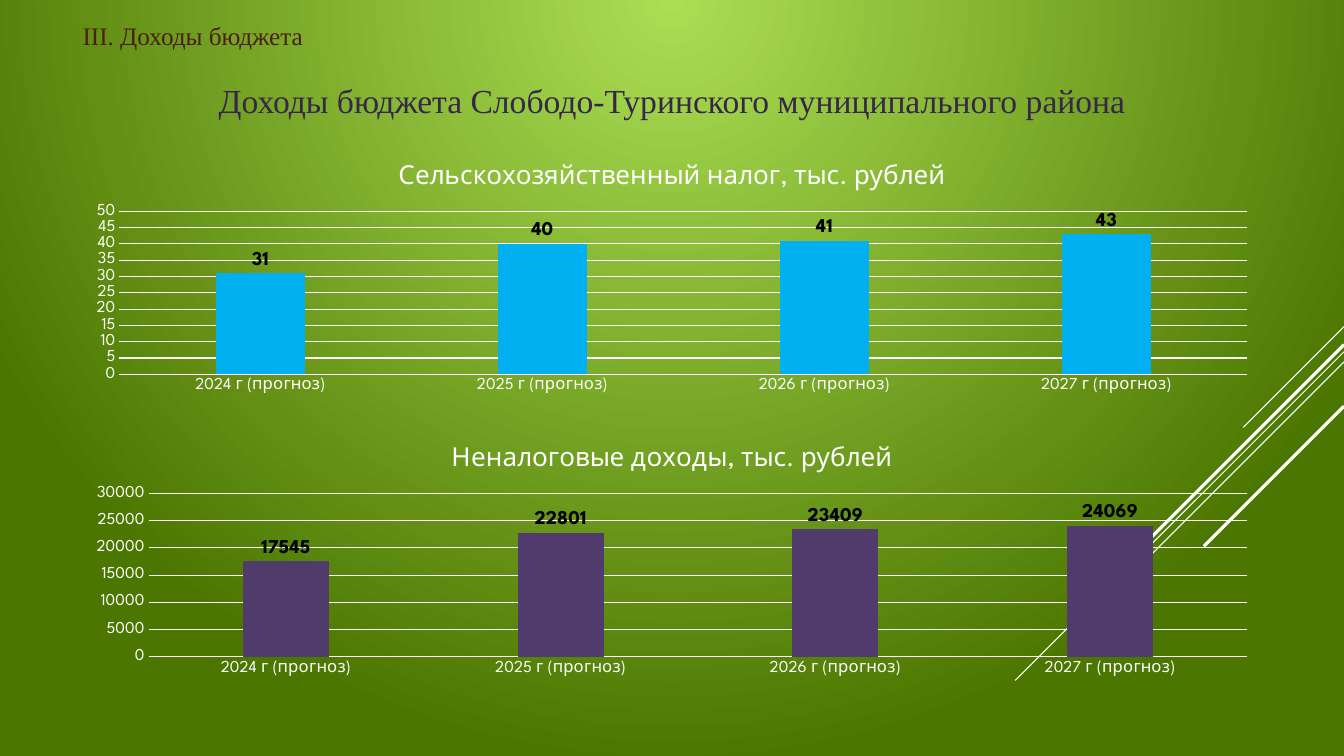
from lxml import etree
from pptx import Presentation
from pptx.chart.data import CategoryChartData
from pptx.dml.color import RGBColor
from pptx.enum.chart import XL_CHART_TYPE as ChartType, XL_LABEL_POSITION as LabelPos
from pptx.enum.chart import XL_TICK_MARK as TickMark
from pptx.enum.shapes import MSO_CONNECTOR as Connector
from pptx.enum.text import MSO_ANCHOR as Anchor, PP_ALIGN as Align
from pptx.oxml.ns import qn
from pptx.util import Inches, Pt

WHITE = RGBColor(0xFF, 0xFF, 0xFF)
BLACK = RGBColor(0x00, 0x00, 0x00)
LIME = RGBColor(0xAC, 0xDE, 0x54)
GREEN = RGBColor(0x4B, 0x77, 0x00)
BLUE = RGBColor(0x00, 0xB0, 0xF0)
PURPLE = RGBColor(0x51, 0x3A, 0x6C)
BROWN = RGBColor(0x4C, 0x1E, 0x14)
PLUM = RGBColor(0x36, 0x27, 0x48)

CHART_FONT = "League Spartan"
TEXT_FONT = "Times New Roman"
WIDTH, HEIGHT = 13.33, 7.5
MARGIN = 0.72
CONTENT_WIDTH = WIDTH - 2 * MARGIN
CHART_TOP, CHART_HEIGHT, CHART_STEP = 1.46, 2.5, 2.8

YEARS = [f"{year} г (прогноз)" for year in range(2024, 2028)]
CHARTS = [
    ("Сельскохозяйственный налог, тыс. рублей", (31, 40, 41, 43), BLUE),
    ("Неналоговые доходы, тыс. рублей", (17545, 22801, 23409, 24069), PURPLE),
]
RAYS = [
    (3.24, 1.0, 0.75),
    (3.49, 3.26, 0.75),
    (3.59, 2.07, 0.75),
    (3.42, 1.91, 2.25),
    (4.03, 1.39, 2.25),
]


def set_font(font, name, size, color, bold=False):
    font.name = name
    font.size = Pt(size)
    font.color.rgb = color
    font.bold = bold


def set_line(line, color, width):
    line.color.rgb = color
    line.width = Pt(width)


def paint_background(s):
    fill = s.background.fill
    fill.gradient()
    for stop, color, position in zip(fill.gradient_stops, (LIME, GREEN), (0, 1)):
        stop.color.rgb = color
        stop.position = position
    grad = s.element.find(".//" + qn("a:gradFill"))
    lin = grad.find(qn("a:lin"))
    circle = etree.Element(qn("a:path"), path="circle")
    etree.SubElement(circle, qn("a:fillToRect"), l="50000", t="0", r="50000", b="100000")
    grad.replace(lin, circle)


def add_ray(s, top, run, width):
    ray = s.shapes.add_connector(
        Connector.STRAIGHT, Inches(WIDTH), Inches(top),
        Inches(WIDTH - run), Inches(top + run))
    set_line(ray.line, WHITE, width)
    etree.SubElement(ray.element.spPr, qn("a:effectLst"))


def add_text(s, text, top, height, size, color, align, anchor):
    box = s.shapes.add_textbox(
        Inches(MARGIN), Inches(top), Inches(CONTENT_WIDTH), Inches(height))
    tf = box.text_frame
    tf.word_wrap = True
    tf.vertical_anchor = anchor
    p = tf.paragraphs[0]
    p.text = text
    p.alignment = align
    set_font(p.runs[0].font, TEXT_FONT, size, color)


def style_axis(axis):
    axis.major_tick_mark = axis.minor_tick_mark = TickMark.NONE
    set_font(axis.tick_labels.font, CHART_FONT, 11.9, WHITE)


def add_column_chart(s, row, title, values, color):
    data = CategoryChartData(number_format="General")
    data.categories = YEARS
    data.add_series(title, values)
    chart = s.shapes.add_chart(
        ChartType.COLUMN_CLUSTERED, Inches(MARGIN), Inches(CHART_TOP + row * CHART_STEP),
        Inches(CONTENT_WIDTH), Inches(CHART_HEIGHT), data).chart
    set_font(chart.font, CHART_FONT, 10, BLACK)
    chart.has_legend = False
    chart.has_title = True
    p = chart.chart_title.text_frame.paragraphs[0]
    p.text = title
    set_font(p.runs[0].font, CHART_FONT, 18.6, WHITE)
    chart.chart_title.include_in_layout = False

    style_axis(chart.category_axis)
    set_line(chart.category_axis.format.line, WHITE, 0.75)
    style_axis(chart.value_axis)
    chart.value_axis.format.line.fill.background()
    set_line(chart.value_axis.major_gridlines.format.line, WHITE, 0.75)

    plot = chart.plots[0]
    plot.vary_by_categories = False
    plot.gap_width = 219
    plot.overlap = -27
    series = plot.series[0]
    series.format.fill.solid()
    series.format.fill.fore_color.rgb = color
    labels = series.data_labels
    labels.show_value = True
    labels.position = LabelPos.OUTSIDE_END
    labels.number_format = "General"
    labels.number_format_is_linked = False
    set_font(labels.font, CHART_FONT, 14, BLACK, bold=True)


def main():
    prs = Presentation()
    prs.slide_width, prs.slide_height = Inches(WIDTH), Inches(HEIGHT)
    s = prs.slides.add_slide(prs.slide_layouts[6])
    paint_background(s)
    for ray in RAYS:
        add_ray(s, *ray)
    for row, content in enumerate(CHARTS):
        add_column_chart(s, row, *content)
    add_text(s, "III. Доходы бюджета", 0.19, 0.32, 18, BROWN, Align.LEFT, Anchor.MIDDLE)
    add_text(s, "Доходы бюджета Слободо-Туринского муниципального района",
             0.74, 0.5, 24, PLUM, Align.CENTER, Anchor.TOP)
    prs.save("out.pptx")


if __name__ == "__main__":
    main()
